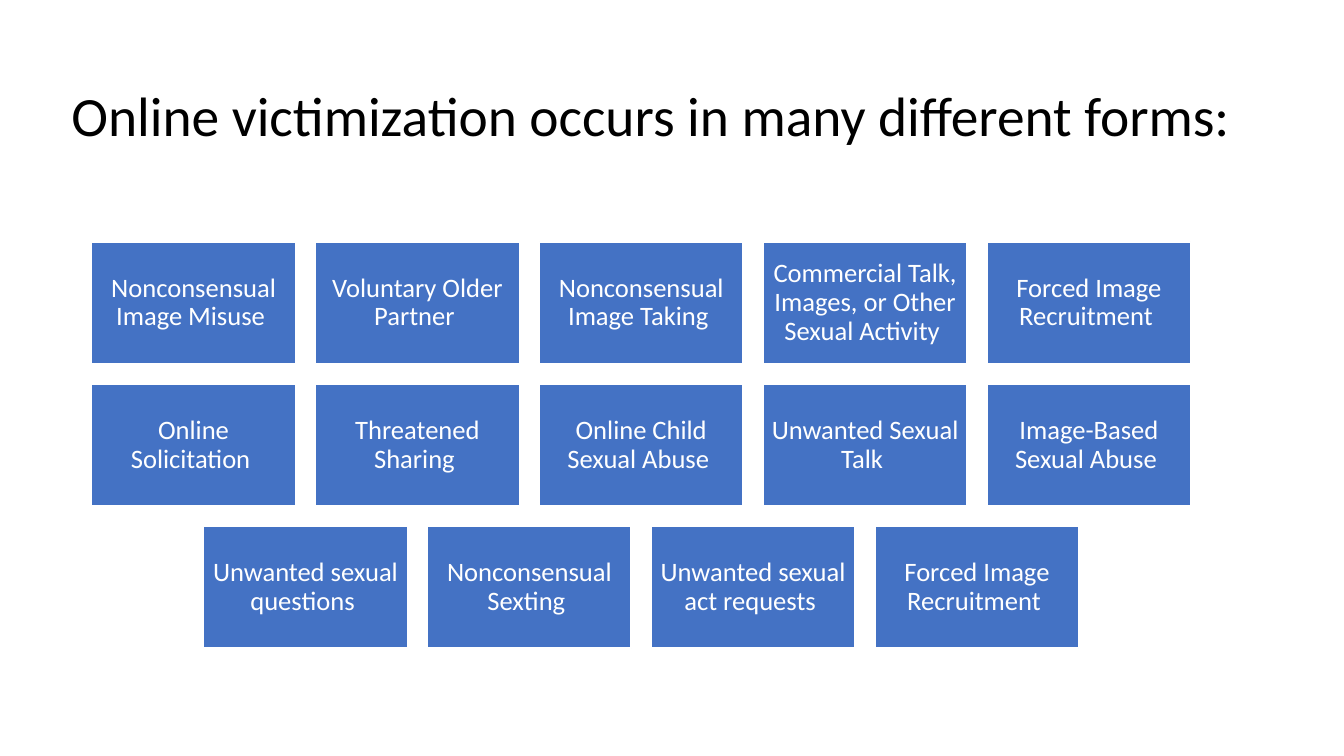
from dataclasses import dataclass

from pptx import Presentation
from pptx.dml.color import RGBColor
from pptx.enum.shapes import MSO_SHAPE
from pptx.enum.text import MSO_ANCHOR, PP_ALIGN
from pptx.shapes.autoshape import Shape
from pptx.slide import Slide
from pptx.util import Inches, Pt

FONT = "Calibri"
BLUE, WHITE, BLACK = "4472C4", "FFFFFF", "000000"
TITLE = "Online victimization occurs in many different forms:"

WIDTH, HEIGHT, GAP = 2.02, 1.21, 0.2
CENTER, TOP = 6.36, 2.4

ROWS = [
    [
        "Nonconsensual Image Misuse",
        "Voluntary Older Partner",
        "Nonconsensual Image Taking",
        "Commercial Talk, Images, or Other Sexual Activity",
        "Forced Image Recruitment",
    ],
    [
        "Online Solicitation",
        "Threatened Sharing",
        "Online Child Sexual Abuse",
        "Unwanted Sexual Talk",
        "Image-Based Sexual Abuse",
    ],
    [
        "Unwanted sexual questions",
        "Nonconsensual Sexting",
        "Unwanted sexual act requests",
        "Forced Image Recruitment",
    ],
]


@dataclass(frozen=True)
class Tile:
    label: str
    left: float
    top: float


def color(code: str) -> RGBColor:
    return RGBColor.from_string(code)


def write(shape: Shape, text: str, size: float, code: str, align: PP_ALIGN) -> None:
    frame = shape.text_frame
    frame.word_wrap = True
    line = frame.paragraphs[0]
    line.text = text
    line.alignment = align
    line.line_spacing = 0.9
    line.font.name = FONT
    line.font.size = Pt(size)
    line.font.color.rgb = color(code)


def add_title(slide: Slide) -> None:
    box = slide.shapes.add_textbox(Inches(0.61), Inches(0.76), Inches(12.02), Inches(1.45))
    write(box, TITLE, 39.6, BLACK, PP_ALIGN.LEFT)
    box.text_frame.vertical_anchor = MSO_ANCHOR.TOP
    box.text_frame.margin_top = Inches(0.12)


def add_tile(slide: Slide, tile: Tile) -> None:
    box = slide.shapes.add_shape(
        MSO_SHAPE.RECTANGLE, Inches(tile.left), Inches(tile.top), Inches(WIDTH), Inches(HEIGHT)
    )
    box.shadow.inherit = False
    box.fill.solid()
    box.fill.fore_color.rgb = color(BLUE)
    box.line.color.rgb = color(WHITE)
    box.line.width = Pt(1)
    write(box, f"{tile.label} ", 19, WHITE, PP_ALIGN.CENTER)
    frame = box.text_frame
    frame.vertical_anchor = MSO_ANCHOR.MIDDLE
    frame.margin_left = frame.margin_right = Inches(0.08)
    frame.margin_top = frame.margin_bottom = Inches(0.08)


def place_tiles() -> list[Tile]:
    tiles = []
    for row, labels in enumerate(ROWS):
        start = CENTER - (len(labels) * (WIDTH + GAP) - GAP) / 2
        top = TOP + row * (HEIGHT + GAP)
        for col, label in enumerate(labels):
            tiles.append(Tile(label, start + col * (WIDTH + GAP), top))
    return tiles


def main() -> None:
    deck = Presentation()
    deck.slide_width, deck.slide_height = Inches(13.33), Inches(7.5)
    slide = deck.slides.add_slide(deck.slide_layouts[6])
    add_title(slide)
    for tile in place_tiles():
        add_tile(slide, tile)
    deck.save("out.pptx")


if __name__ == "__main__":
    main()
